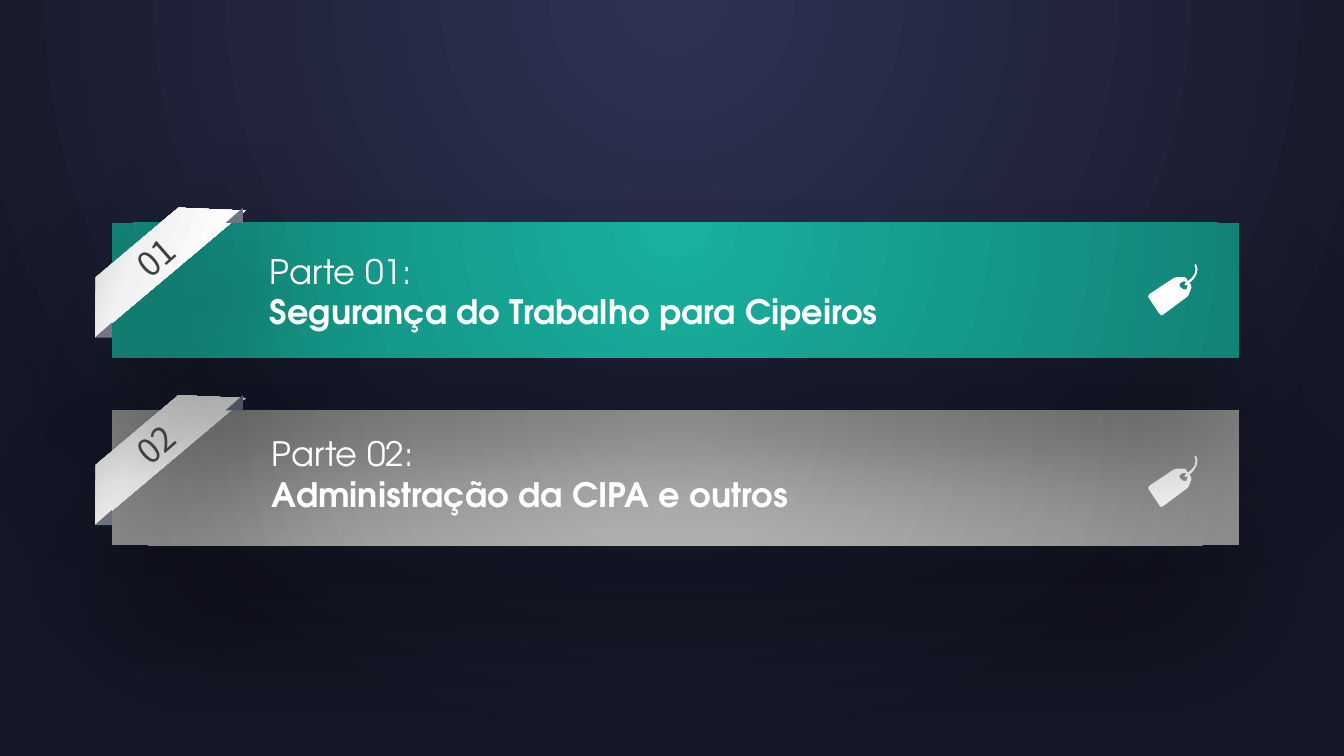
"""Agenda slide with two ribbon-numbered bars on a dark radial background."""
from lxml import etree
from pptx import Presentation
from pptx import util as u
from pptx.dml.color import RGBColor
from pptx.enum import shapes, text
from pptx.oxml.ns import qn


def add(parent, tag, **attrs):
    return etree.SubElement(parent, qn(tag), {k: str(v) for k, v in attrs.items()})


def paint(obj, fill, stops, angle=None, shadow=None):
    fill.gradient()
    grad = obj.element.find(".//" + qn("a:gradFill"))
    for child in list(grad):
        grad.remove(child)
    gs = add(grad, "a:gsLst")
    for pos, color in stops:
        add(add(gs, "a:gs", pos=pos * 1000), "a:srgbClr", val=color)
    if angle is None:
        circle = add(grad, "a:path", path="circle")
        add(circle, "a:fillToRect", l=50000, t=-80000, r=50000, b=180000)
    else:
        add(grad, "a:lin", ang=angle * 60000, scaled=0)
    if shadow:
        dist, direction = shadow
        effects = obj.element.spPr.find(qn("a:effectLst"))
        outer = add(effects, "a:outerShdw", blurRad=u.Pt(100), dist=u.Pt(dist),
                    dir=direction * 60000, algn="t", rotWithShape=0)
        add(add(outer, "a:srgbClr", val="000000"), "a:alpha", val=40000)


ROWS = [
    dict(top=4.07, number="02", colors=("BFBFBF", "8F8F8F"), tag=4.52, caption=(2.6, 4.25),
         lines=("Parte 02:", "Administração da CIPA e outros")),
    dict(top=2.21, number="01", colors=("18B09E", "128477"), tag=2.62, caption=(2.58, 2.44),
         lines=("Parte 01:", "Segurança do Trabalho para Cipeiros")),
]
BAND = [(0, 45), (39, 0), (146, 0), (195, 45)]
TAG = [(48, 1), (47, 0), (46, 1), (47, 5), (46, 10), (43, 14), (39, 17), (38, 14), (36, 13),
       (28, 13), (25, 14), (1, 30), (0, 32), (1, 34), (11, 49), (13, 51), (15, 50), (38, 33),
       (40, 31), (43, 23), (42, 20), (41, 19), (45, 15), (48, 10), (49, 5)]
HOLE = [(38, 25), (35, 25), (32, 23), (31, 20), (33, 18), (36, 17), (38, 18), (37, 19),
        (36, 20), (37, 21), (38, 21), (39, 20), (39, 22)]

prs = Presentation()
prs.slide_width, prs.slide_height = u.Inches(13.333), u.Inches(7.5)
s = prs.slides.add_slide(prs.slide_layouts[6])
paint(s, s.background.fill, [(2, "2E3252"), (100, "161828")])
unit = u.Inches(0.01)

for row in ROWS:
    top = row["top"]
    bar = s.shapes.add_shape(shapes.MSO_SHAPE.RECTANGLE, u.Inches(1.11), u.Inches(top),
                             u.Inches(11.18), u.Inches(1.34))
    fb = s.shapes.build_freeform(*BAND[0], scale=unit)
    fb.add_line_segments(BAND[1:])
    band = fb.convert_to_shape(u.Inches(0.57), u.Inches(top + 0.11))
    band.rotation = 319.9
    folds = []
    for x, dy in ((0.94, 0.99), (2.24, -0.15)):
        fold = s.shapes.add_shape(shapes.MSO_SHAPE.RIGHT_TRIANGLE, u.Inches(x),
                                  u.Inches(top + dy), u.Inches(0.17), u.Inches(0.15))
        fold.element.spPr.xfrm.set("flipH", "1")
        folds.append((fold, "727586"))
    fb = s.shapes.build_freeform(*TAG[0], scale=unit)
    fb.add_line_segments(TAG[1:])
    fb.move_to(*HOLE[0])
    fb.add_line_segments(HOLE[1:])
    tag = fb.convert_to_shape(u.Inches(11.39), u.Inches(row["tag"]))

    for sp in (bar, band, tag, *(fold for fold, _ in folds)):
        sp.shadow.inherit = False
        sp.line.fill.background()
    for sp, color in (*folds, (tag, "FFFFFF")):
        sp.fill.solid()
        sp.fill.fore_color.rgb = RGBColor.from_string(color)
    paint(bar, bar.fill, zip((2, 100), row["colors"]), shadow=(71, 90))
    paint(band, band.fill, [(0, "BFBFBF"), (42, "F2F2F2"), (84, "FFFFFF")], 60, (46, 45))

for row in ROWS:
    number = dict(box=(0.77, row["top"] + 0.09, 1.55, 0.5), rotation=318.8,
                  lines=[row["number"]], font="Noto Sans CJK SC", color="404040",
                  anchor=text.MSO_ANCHOR.MIDDLE, align=text.PP_ALIGN.CENTER)
    caption = dict(box=(*row["caption"], 9.17, 0.91), rotation=0, lines=row["lines"],
                   font="TeX Gyre Adventor", color="FFFFFF",
                   anchor=text.MSO_ANCHOR.TOP, align=text.PP_ALIGN.LEFT)
    for fmt in (number, caption):
        sp = s.shapes.add_textbox(*map(u.Inches, fmt["box"]))
        sp.rotation = fmt["rotation"]
        tf = sp.text_frame
        tf.word_wrap = True
        tf.vertical_anchor = fmt["anchor"]
        for i, line in enumerate(fmt["lines"]):
            p = tf.add_paragraph() if i else tf.paragraphs[0]
            p.alignment = fmt["align"]
            r = p.add_run()
            r.text = line
            for name, value in dict(name=fmt["font"], size=u.Pt(24), bold=i == 1).items():
                setattr(r.font, name, value)
            r.font.color.rgb = RGBColor.from_string(fmt["color"])

prs.save("out.pptx")
